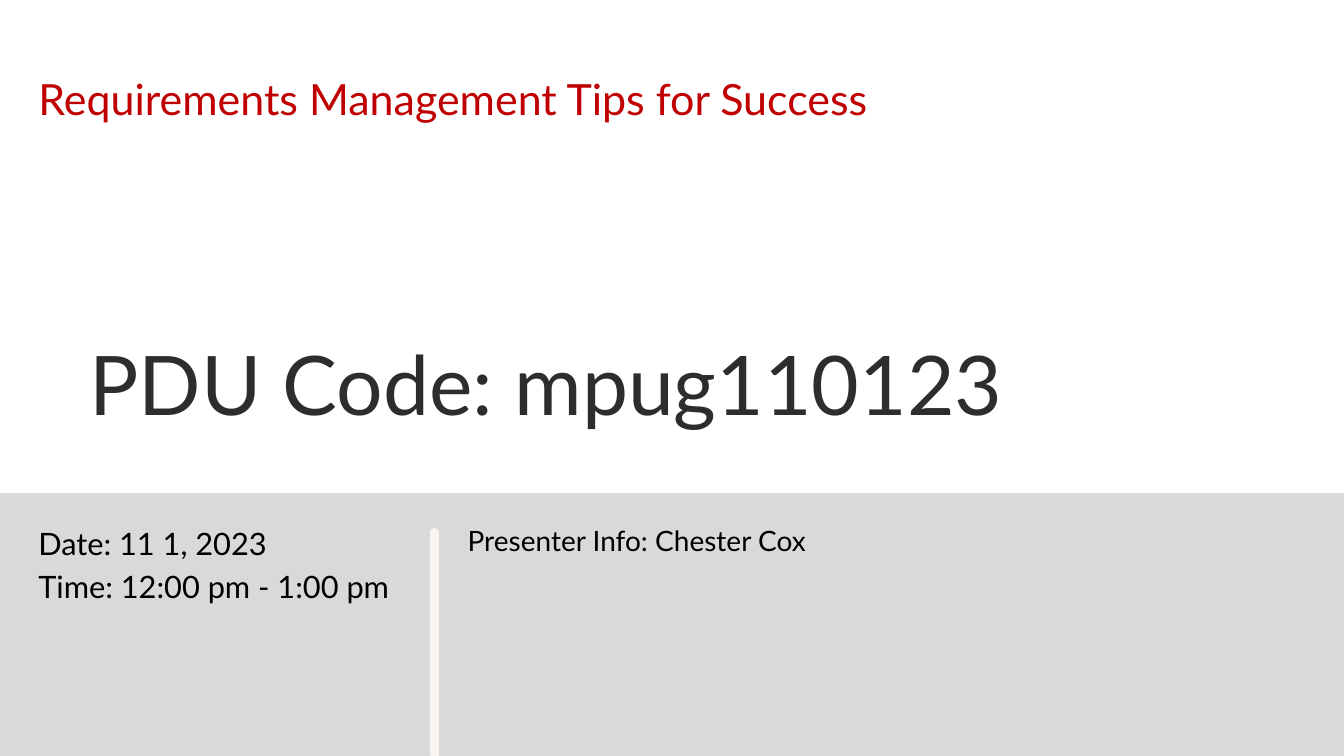
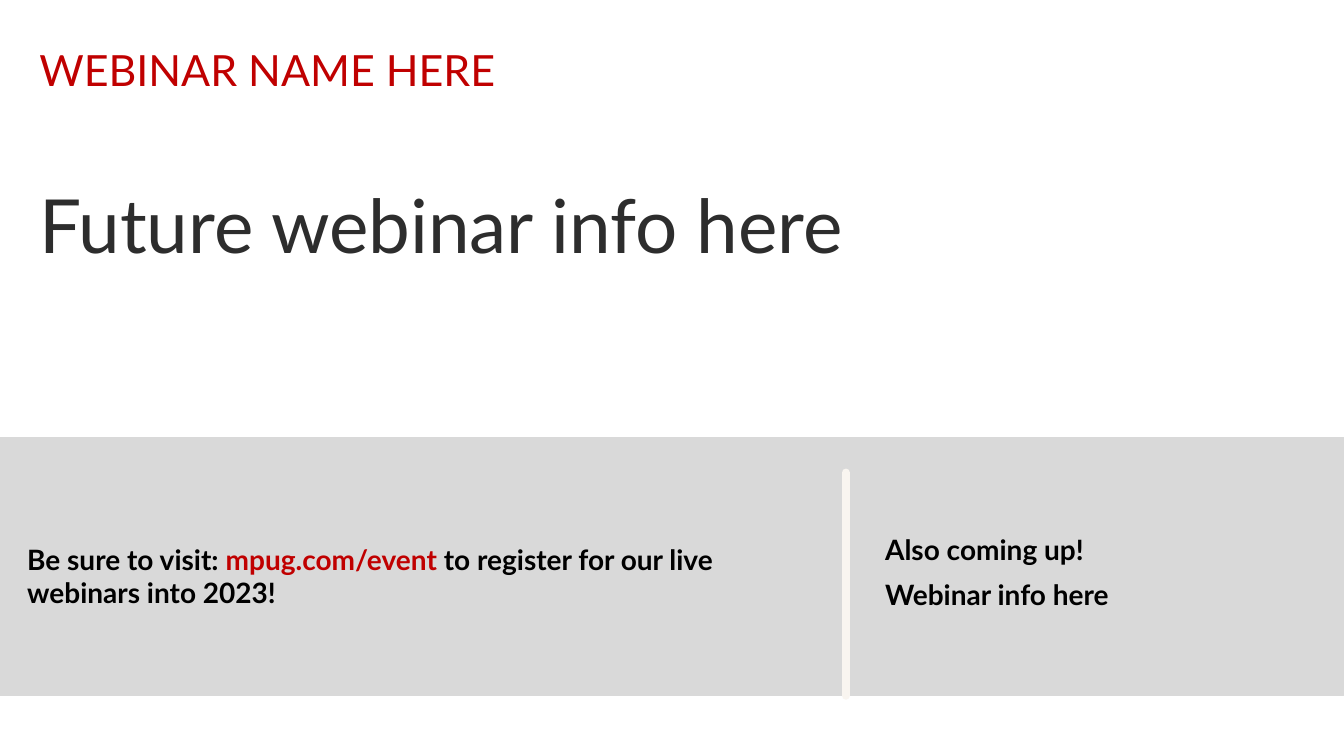
"""Build the webinar opening slide and the upcoming webinar slide."""
import pptx
import pptx.dml.color
import pptx.enum.shapes
import pptx.util
from lxml import etree

Pt = pptx.util.Pt
WIDTH, HEIGHT = 960, 540
FONT = "Lato"
RED, DARK, BLACK = "C00000", "2D2D2D", "000000"
BAND_FILL, DIVIDER = "D9D9D9", "F9F5F0"
TITLE = dict(size=30.7, color=RED, line=42.9)

SLIDES = [
    dict(
        band=(352.8, 187.2),
        divider=(310.3, 380.2, 539.3),
        texts=[
            ((27.4, 46.1, 812, 40), ["Requirements Management Tips for Success"], TITLE),
            ((64.1, 238.3, 889, 71), ["PDU Code: mpug110123"], dict(size=58.7, color=DARK)),
            ((27.4, 370.1, 275, 62), ["Date: 11 1, 2023", "Time: 12:00 pm - 1:00 pm"],
             dict(size=22, line=30.8)),
            ((334.1, 370.1, 598, 28), ["Presenter Info: Chester Cox"], dict(size=20, line=28)),
        ],
    ),
    dict(
        band=(312.5, 184.3),
        divider=(604.1, 337.7, 496.8),
        texts=[
            ((28.1, 25.2, 757, 43), ["WEBINAR NAME HERE"], TITLE),
            ((28.1, 121, 900, 70.4), ["Future webinar info here"],
             dict(size=53.3, color=DARK, line=70.4)),
            ((19.4, 387.4, 556.6, 48),
             [["Be sure to visit: ", ("mpug.com/event ", RED),
               "to register for our live webinars into 2023!"]],
             dict(size=20, bold=True)),
            ((632.2, 380.2, 309, 57), ["Also coming up!", "Webinar info here"],
             dict(size=20, bold=True, gap=8)),
        ],
    ),
]


def rgb(value):
    """Turn a hex string into a colour."""
    return pptx.dml.color.RGBColor.from_string(value)


def add_band(s, top, height):
    """Draw the full-width grey band."""
    sp = s.shapes.add_shape(pptx.enum.shapes.MSO_SHAPE.RECTANGLE,
                            Pt(0), Pt(top), Pt(WIDTH), Pt(height))
    sp.shadow.inherit = False
    sp.fill.solid()
    sp.fill.fore_color.rgb = rgb(BAND_FILL)
    sp.line.color.rgb = rgb(BAND_FILL)
    sp.line.width = Pt(0.75)


def add_divider(s, x, top, bottom):
    """Draw the vertical round-capped line inside the band."""
    sp = s.shapes.add_connector(pptx.enum.shapes.MSO_CONNECTOR.STRAIGHT,
                                Pt(x), Pt(top), Pt(x), Pt(bottom))
    sp.line.color.rgb = rgb(DIVIDER)
    sp.line.width = Pt(6)
    properties = sp._element.spPr
    ln = properties.find(pptx.oxml.ns.qn("a:ln"))
    ln.set("cap", "rnd")
    etree.SubElement(properties, pptx.oxml.ns.qn("a:effectLst"))


def add_text(s, box, paragraphs, size, color=BLACK, bold=False, line=None, gap=0):
    """Add a text box; a paragraph is a string or a list of runs."""
    tf = s.shapes.add_textbox(*map(Pt, box)).text_frame
    tf.word_wrap = True
    tf.margin_left = tf.margin_top = tf.margin_right = tf.margin_bottom = 0
    for i, runs in enumerate(paragraphs):
        p = tf.add_paragraph() if i else tf.paragraphs[0]
        if line:
            p.line_spacing = Pt(line)
        if i and gap:
            p.space_before = Pt(gap)
        for run in [runs] if isinstance(runs, str) else runs:
            text, run_color = (run, color) if isinstance(run, str) else run
            r = p.add_run()
            r.text = text
            r.font.name = FONT
            r.font.size = Pt(size)
            r.font.bold = bold
            r.font.color.rgb = rgb(run_color)


def main():
    """Build and save the slides."""
    prs = pptx.Presentation()
    prs.slide_width, prs.slide_height = Pt(WIDTH), Pt(HEIGHT)
    for content in SLIDES:
        s = prs.slides.add_slide(prs.slide_layouts[6])
        add_band(s, *content["band"])
        add_divider(s, *content["divider"])
        for box, paragraphs, style in content["texts"]:
            add_text(s, box, paragraphs, **style)
    prs.save("out.pptx")


if __name__ == "__main__":
    main()
